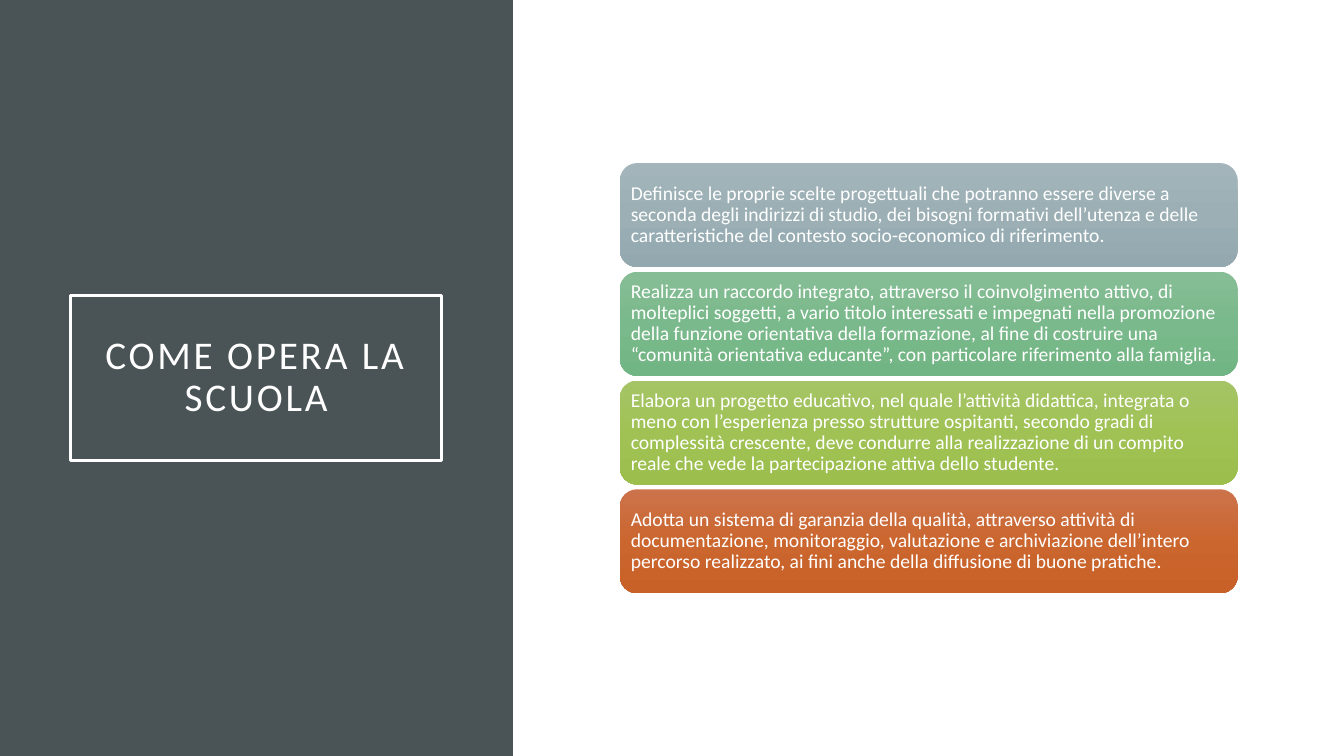
"""Build the slide on how the school operates: a title panel and four stacked cards."""
from copy import deepcopy

from pptx import Presentation
from pptx.dml.color import RGBColor
from pptx.enum.shapes import MSO_SHAPE
from pptx.enum.text import MSO_ANCHOR, MSO_AUTO_SIZE, PP_ALIGN
from pptx.util import Cm, Pt

RECTANGLE = MSO_SHAPE.RECTANGLE
ROUNDED = MSO_SHAPE.ROUNDED_RECTANGLE
MIDDLE = MSO_ANCHOR.MIDDLE
NO_AUTOFIT = MSO_AUTO_SIZE.NONE
LEFT, CENTER = PP_ALIGN.LEFT, PP_ALIGN.CENTER

COLORS = {"panel": "4A5356", "white": "FFFFFF"}
GRADIENTS = {
    "grey": ("A3B5BB", "9BAFB5", "93A9AF"),
    "green": ("86BD95", "7AB98B", "72B584"),
    "lime": ("A5C466", "A0C255", "9BBE4D"),
    "orange": ("CC734B", "CB662F", "C86128"),
}
CARDS = [
    ("grey", "Definisce le proprie scelte progettuali che potranno essere diverse a seconda "
     "degli indirizzi di studio, dei bisogni formativi dell’utenza e delle caratteristiche "
     "del contesto socio-economico di riferimento."),
    ("green", "Realizza un raccordo integrato, attraverso il coinvolgimento attivo, di "
     "molteplici soggetti, a vario titolo interessati e impegnati nella promozione della "
     "funzione orientativa della formazione, al fine di costruire una “comunità orientativa "
     "educante”, con particolare riferimento alla famiglia."),
    ("lime", "Elabora un progetto educativo, nel quale l’attività didattica, integrata o meno "
     "con l’esperienza presso strutture ospitanti, secondo gradi di complessità crescente, "
     "deve condurre alla realizzazione di un compito reale che vede la partecipazione attiva "
     "dello studente."),
    ("orange", "Adotta un sistema di garanzia della qualità, attraverso attività di "
     "documentazione, monitoraggio, valutazione e archiviazione dell’intero percorso "
     "realizzato, ai fini anche della diffusione di buone pratiche."),
]
CARD_LEFT, CARD_TOP, CARD_WIDTH, CARD_HEIGHT = 15.62, 4.11, 15.57, 2.62
CARD_GAP = 0.12


def write_text(shape, text, size, align, inset, tracking=0):
    frame = shape.text_frame
    frame.word_wrap = True
    frame.auto_size = NO_AUTOFIT
    frame.vertical_anchor = MIDDLE
    frame.margin_left = frame.margin_right = Cm(inset)
    frame.margin_top = frame.margin_bottom = Cm(inset)
    paragraph = frame.paragraphs[0]
    paragraph.alignment = align
    paragraph.line_spacing = 0.9
    run = paragraph.add_run()
    run.text = text
    run.font.name = "Calibri"
    run.font.size = Pt(size)
    run.font.color.rgb = RGBColor.from_string(COLORS["white"])
    if tracking:
        run.font._element.set("spc", str(tracking * 100))


presentation = Presentation()
presentation.slide_width = Cm(33.87)
presentation.slide_height = Cm(19.05)
slide = presentation.slides.add_slide(presentation.slide_layouts[5])

panel = slide.shapes.add_shape(RECTANGLE, 0, 0, Cm(12.93), presentation.slide_height)
panel.shadow.inherit = False
panel.fill.solid()
panel.fill.fore_color.rgb = RGBColor.from_string(COLORS["panel"])
panel.line.fill.background()

title = slide.shapes.title
title.left, title.top, title.width, title.height = Cm(1.78), Cm(7.44), Cm(9.35), Cm(4.17)
title.line.color.rgb = RGBColor.from_string(COLORS["white"])
title.line.width = Pt(2.5)
write_text(title, "COME OPERA LA SCUOLA", size=28, align=CENTER, inset=0.51, tracking=2)
panel._element.addnext(title._element)

for index, (gradient, text) in enumerate(CARDS):
    top = CARD_TOP + index * (CARD_HEIGHT + CARD_GAP)
    card = slide.shapes.add_shape(
        ROUNDED, Cm(CARD_LEFT), Cm(top), Cm(CARD_WIDTH), Cm(CARD_HEIGHT))
    card.shadow.inherit = False
    card.line.fill.background()
    card.fill.gradient()
    card.fill.gradient_angle = 270
    first_stop = card.fill.gradient_stops[0]._gs
    first_stop.addnext(deepcopy(first_stop))
    for stop, position, color in zip(card.fill.gradient_stops, (0, 0.5, 1), GRADIENTS[gradient]):
        stop.position = position
        stop.color.rgb = RGBColor.from_string(color)
    write_text(card, text, size=14, align=LEFT, inset=0.15)

presentation.save("out.pptx")
